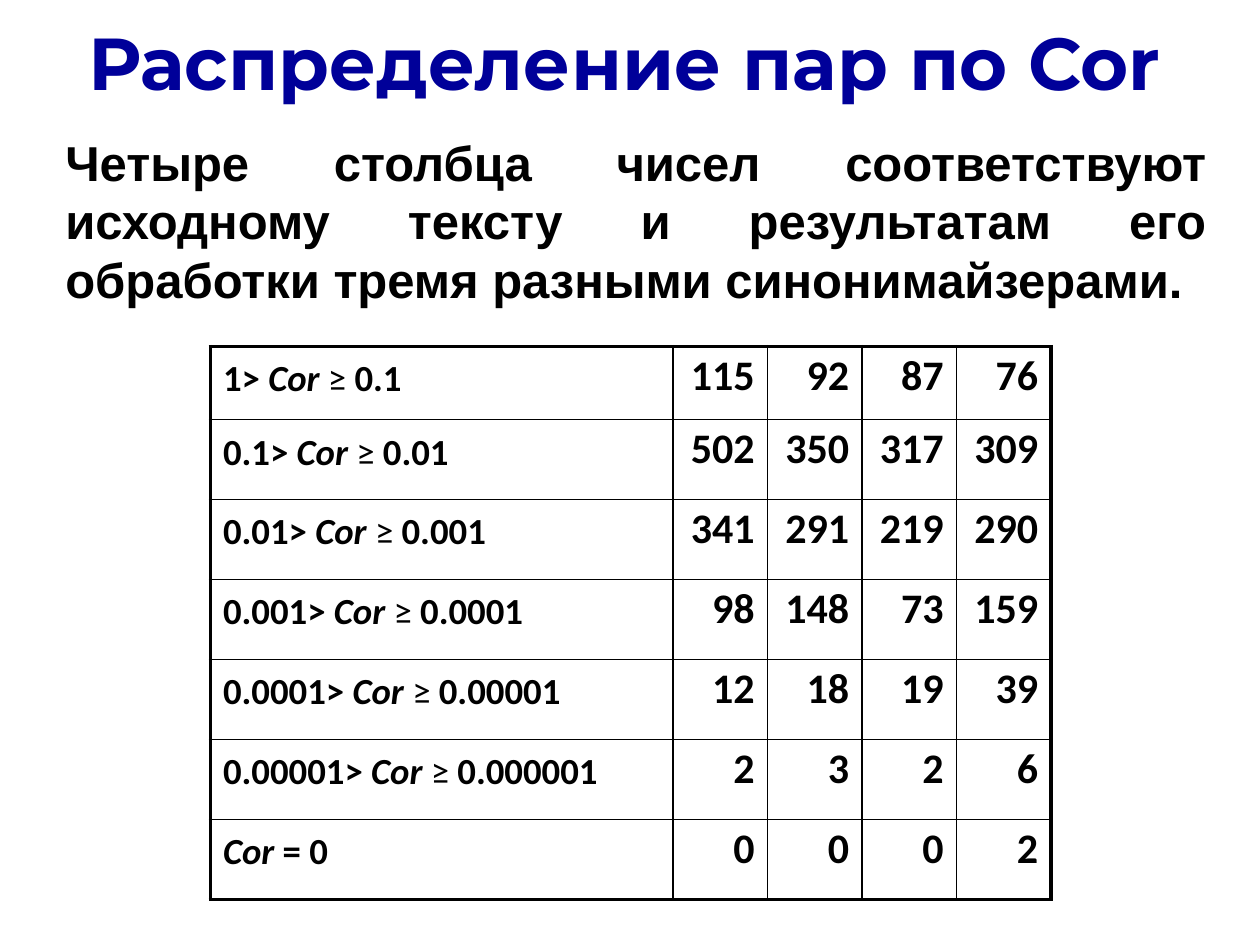
from dataclasses import dataclass
from typing import Any

from lxml.etree import SubElement
from pptx import Presentation
from pptx.dml.color import RGBColor
from pptx.enum.text import PP_ALIGN
from pptx.oxml.ns import qn
from pptx.util import Inches, Pt

COLORS = {"title": "000099", "text": "000000"}
TITLE_FONT = {"name": "Montserrat", "size": Pt(42), "bold": True}
INTRO_FONT = {"name": "Arial", "size": Pt(28), "bold": True}
RANGE_FONT = {"name": "Calibri", "size": Pt(21), "bold": True}
COUNT_FONT = RANGE_FONT | {"size": Pt(24)}
COR_FONT = RANGE_FONT | {"italic": True}
SIGN_FONT = RANGE_FONT | {"bold": False}
CELL_FORMAT = {"line_spacing": Pt(28), "space_after": Pt(24)}
OUTER, INNER = Pt(2.25), Pt(1)
COLUMN_WIDTHS = [3.67] + [0.75] * 4
ROW_HEIGHTS = [0.58] + [0.635] * 6


@dataclass
class CorRange:
    upper: str
    lower: str
    counts: tuple[int, int, int, int]

    def label(self) -> list[tuple[str, dict]]:
        if not self.upper:
            return [("Cor ", COR_FONT), (f"= {self.lower}", RANGE_FONT)]
        return [(f"{self.upper}> ", RANGE_FONT), ("Cor ", COR_FONT),
                ("≥ ", SIGN_FONT), (self.lower, RANGE_FONT)]


RANGES = [
    CorRange("1", "0.1", (115, 92, 87, 76)),
    CorRange("0.1", "0.01", (502, 350, 317, 309)),
    CorRange("0.01", "0.001", (341, 291, 219, 290)),
    CorRange("0.001", "0.0001", (98, 148, 73, 159)),
    CorRange("0.0001", "0.00001", (12, 18, 19, 39)),
    CorRange("0.00001", "0.000001", (2, 3, 2, 6)),
    CorRange("", "0", (0, 0, 0, 2)),
]


def apply(target: Any, values: dict) -> None:
    for key, value in values.items():
        setattr(target, key, value)


def write(paragraph: Any, runs: list[tuple[str, dict]], layout: dict, color: str = "text") -> None:
    apply(paragraph, layout)
    for text, font in runs:
        run = paragraph.add_run()
        run.text = text
        apply(run.font, font)
        run.font.color.rgb = RGBColor.from_string(COLORS[color])


def add_text(slide: Any, box: tuple, text: str, font: dict, layout: dict,
             color: str = "text", frame_format: dict | None = None) -> None:
    frame = slide.shapes.add_textbox(*map(Inches, box)).text_frame
    apply(frame, {"word_wrap": True} | (frame_format or {}))
    write(frame.paragraphs[0], [(text, font)], layout, color)


def draw_borders(cell: Any, row: int, column: int) -> None:
    """Rule every side of the cell, heavier on the table's outer edge."""
    on_edge = {
        "L": column == 0,
        "R": column == len(COLUMN_WIDTHS) - 1,
        "T": row == 0,
        "B": row == len(ROW_HEIGHTS) - 1,
    }
    properties = cell._tc.get_or_add_tcPr()
    for side, outer in on_edge.items():
        line = SubElement(properties, qn(f"a:ln{side}"), w=str(OUTER if outer else INNER))
        fill = SubElement(line, qn("a:solidFill"))
        SubElement(fill, qn("a:srgbClr"), val=COLORS["text"])
    cell.fill.background()


def add_distribution(slide: Any) -> None:
    table = slide.shapes.add_table(
        len(ROW_HEIGHTS), len(COLUMN_WIDTHS), Inches(1.67), Inches(2.75),
        Inches(sum(COLUMN_WIDTHS)), Inches(sum(ROW_HEIGHTS))).table
    apply(table, {"first_row": False, "horz_banding": False})
    for column, width in zip(table.columns, COLUMN_WIDTHS):
        column.width = Inches(width)
    for row, height in zip(table.rows, ROW_HEIGHTS):
        row.height = Inches(height)
    for row, cor_range in enumerate(RANGES):
        contents = [cor_range.label()] + [[(str(n), COUNT_FONT)] for n in cor_range.counts]
        for column, runs in enumerate(contents):
            cell = table.cell(row, column)
            alignment = PP_ALIGN.RIGHT if column else PP_ALIGN.LEFT
            write(cell.text_frame.paragraphs[0], runs, CELL_FORMAT | {"alignment": alignment})
            draw_borders(cell, row, column)


def main() -> None:
    presentation = Presentation()
    apply(presentation, {"slide_width": Inches(10), "slide_height": Inches(7.5)})
    slide = presentation.slides.add_slide(presentation.slide_layouts[6])
    no_margins = {f"margin_{side}": 0 for side in ("left", "top", "right", "bottom")}
    add_text(slide, (0.33, 0.42, 9.25, 0.91), "Распределение пар по Cor", TITLE_FONT,
             {"alignment": PP_ALIGN.CENTER, "line_spacing": Pt(30), "space_after": Pt(24)},
             "title", no_margins)
    add_text(slide, (0.42, 1, 9.25, 1.5),
             "Четыре столбца чисел соответствуют исходному тексту и результатам "
             "его обработки тремя разными синонимайзерами.",
             INTRO_FONT, {"alignment": PP_ALIGN.JUSTIFY})
    add_distribution(slide)
    presentation.save("out.pptx")


if __name__ == "__main__":
    main()
